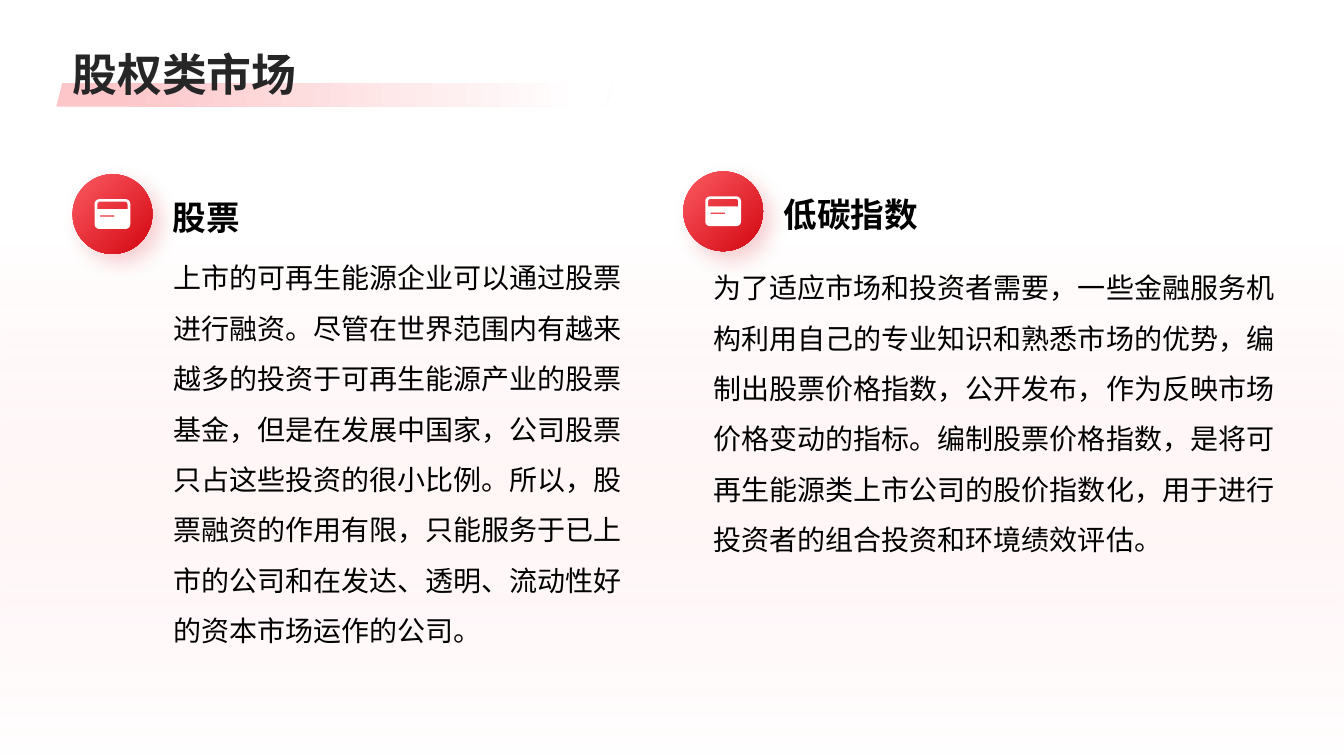
from math import cos, pi, sin

from lxml import etree
from pptx import Presentation
from pptx.dml.color import RGBColor
from pptx.enum.shapes import MSO_SHAPE
from pptx.enum.text import MSO_ANCHOR
from pptx.oxml.ns import qn
from pptx.util import Cm, Pt

RECT, OVAL, SLANT = MSO_SHAPE.RECTANGLE, MSO_SHAPE.OVAL, MSO_SHAPE.PARALLELOGRAM
TOP, MID = MSO_ANCHOR.TOP, MSO_ANCHOR.MIDDLE
FACE = "Noto Sans CJK SC"
WIDE, HIGH = 33.87, 19.05

TITLE = "股权类市场"
TOPICS = [
    {"head": "股票", "spot": (1.83, 4.39), "box": (4.37, 6.15, 11.61, 5.66),
     "body": "上市的可再生能源企业可以通过股票进行融资。尽管在世界范围内有越来越多的投资于"
             "可再生能源产业的股票基金，但是在发展中国家，公司股票只占这些投资的很小比例。"
             "所以，股票融资的作用有限，只能服务于已上市的公司和在发达、透明、流动性好的"
             "资本市场运作的公司。"},
    {"head": "低碳指数", "spot": (17.22, 4.32), "box": (17.98, 6.4, 14.73, 10),
     "body": "为了适应市场和投资者需要，一些金融服务机构利用自己的专业知识和熟悉市场的优势，"
             "编制出股票价格指数，公开发布，作为反映市场价格变动的指标。编制股票价格指数，"
             "是将可再生能源类上市公司的股价指数化，用于进行投资者的组合投资和环境绩效评估。"},
]
STYLES = {
    "title": {"size": Pt(32), "bold": True, "name": FACE, "hue": "262626", "gap": 1.1, "anchor": MID},
    "head": {"size": Pt(24), "bold": True, "name": FACE, "hue": "000000", "gap": 1.5, "anchor": MID},
    "body": {"size": Pt(20), "bold": False, "name": FACE, "hue": "000000", "gap": 1.5, "anchor": TOP},
}
FADES = {
    "back": {"stops": [("FDC6C9", 0, 0), ("FFFFFF", 0.68, 57)], "angle": 90},
    "bar": {"stops": [("FDC6C9", 0.1, 100), ("FFFFFF", 0.95, 100)], "angle": 0},
    "disc": {"stops": [("F9555D", 0.06, 100), ("D30711", 1, 100)], "angle": 315},
}
DISC = 2.01
CARD = [(0, 0, 0.9, 0.75, 0.12, 0.12), (0.07, 0.06, 0.76, 0.19, 0.07, 0), (0.13, 0.41, 0.37, 0.03, 0.01, 0.01)]


def color(code):
    return RGBColor.from_string(code)


def alpha(node, rate):
    etree.SubElement(node, qn("a:alpha"), val=str(rate * 1000))


def shade(slide, kind, box, fade):
    shape = slide.shapes.add_shape(kind, *map(Cm, box))
    shape.shadow.inherit = False
    shape.line.fill.background()
    shape.fill.gradient()
    shape.fill.gradient_angle = fade["angle"]
    for stop, (code, place, rate) in zip(shape.fill.gradient_stops, fade["stops"]):
        stop.color.rgb = color(code)
        stop.position = place
    for node, (code, place, rate) in zip(shape._element.spPr.iter(qn("a:srgbClr")), fade["stops"]):
        if rate < 100:
            alpha(node, rate)
    return shape


def glow(shape):
    root = shape._element.spPr.find(qn("a:effectLst"))
    cast = etree.SubElement(root, qn("a:outerShdw"), blurRad=str(Pt(15)), dist=str(Pt(8)),
                            dir="2700000", algn="tl", rotWithShape="0")
    alpha(etree.SubElement(cast, qn("a:srgbClr"), val="D30711"), 20)


def ring(x, y, w, h, top, base):
    spots = [(x + top, y + top, top, 2), (x + w - top, y + top, top, 3),
             (x + w - base, y + h - base, base, 0), (x + base, y + h - base, base, 1)]
    return [(Cm(a + r * cos((turn + i / 6) * pi / 2)), Cm(b + r * sin((turn + i / 6) * pi / 2)))
            for a, b, r, turn in spots for i in range(7)]


def card(slide, x, y):
    rings = [ring(*part) for part in CARD]
    pen = slide.shapes.build_freeform(*rings[0][0], scale=1.0)
    for i, dots in enumerate(rings):
        if i:
            pen.move_to(*dots[0])
        pen.add_line_segments(dots[1:], close=True)
    shape = pen.convert_to_shape(Cm(x), Cm(y))
    shape.shadow.inherit = False
    shape.fill.solid()
    shape.fill.fore_color.rgb = color("FFFFFF")
    shape.line.fill.background()


def write(slide, text, box, style):
    frame = slide.shapes.add_textbox(*map(Cm, box)).text_frame
    sides = {"margin_" + side: 0 for side in ("left", "top", "right", "bottom")}
    for key, value in {**sides, "word_wrap": True, "vertical_anchor": style["anchor"]}.items():
        setattr(frame, key, value)
    para = frame.paragraphs[0]
    para.line_spacing = style["gap"]
    run = para.add_run()
    run.text = text
    for key in ("size", "bold", "name"):
        setattr(run.font, key, style[key])
    run.font.color.rgb = color(style["hue"])
    etree.SubElement(run._r.rPr, qn("a:ea"), typeface=FACE)


def main():
    """Build the slide on the two kinds of equity market."""
    deck = Presentation()
    deck.slide_width, deck.slide_height = Cm(WIDE), Cm(HIGH)
    slide = deck.slides.add_slide(deck.slide_layouts[6])
    shade(slide, RECT, (0, 0, WIDE, HIGH), FADES["back"])
    shade(slide, SLANT, (1.42, 2.08, 14, 0.61), FADES["bar"])
    write(slide, TITLE, (1.83, 1.19, 30.18, 1.19), STYLES["title"])
    for topic in TOPICS:
        x, y = topic["spot"]
        glow(shade(slide, OVAL, (x, y, DISC, DISC), FADES["disc"]))
        card(slide, x + (DISC - 0.9) / 2, y + (DISC - 0.75) / 2)
        write(slide, topic["head"], (x + 2.53, y - 0.08, 11.61, 1.8), STYLES["head"])
        write(slide, topic["body"], topic["box"], STYLES["body"])
    deck.save("out.pptx")


if __name__ == "__main__":
    main()
